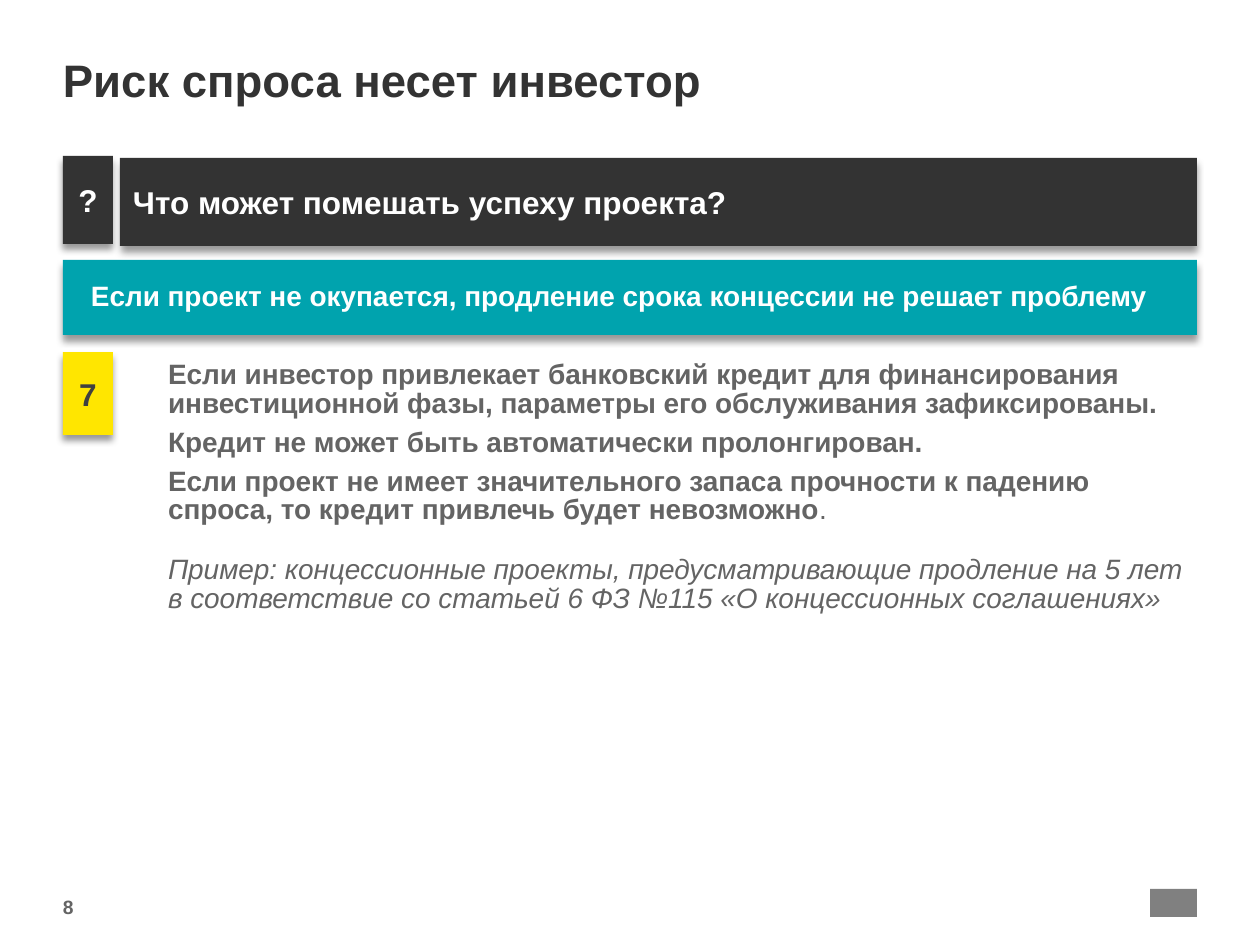
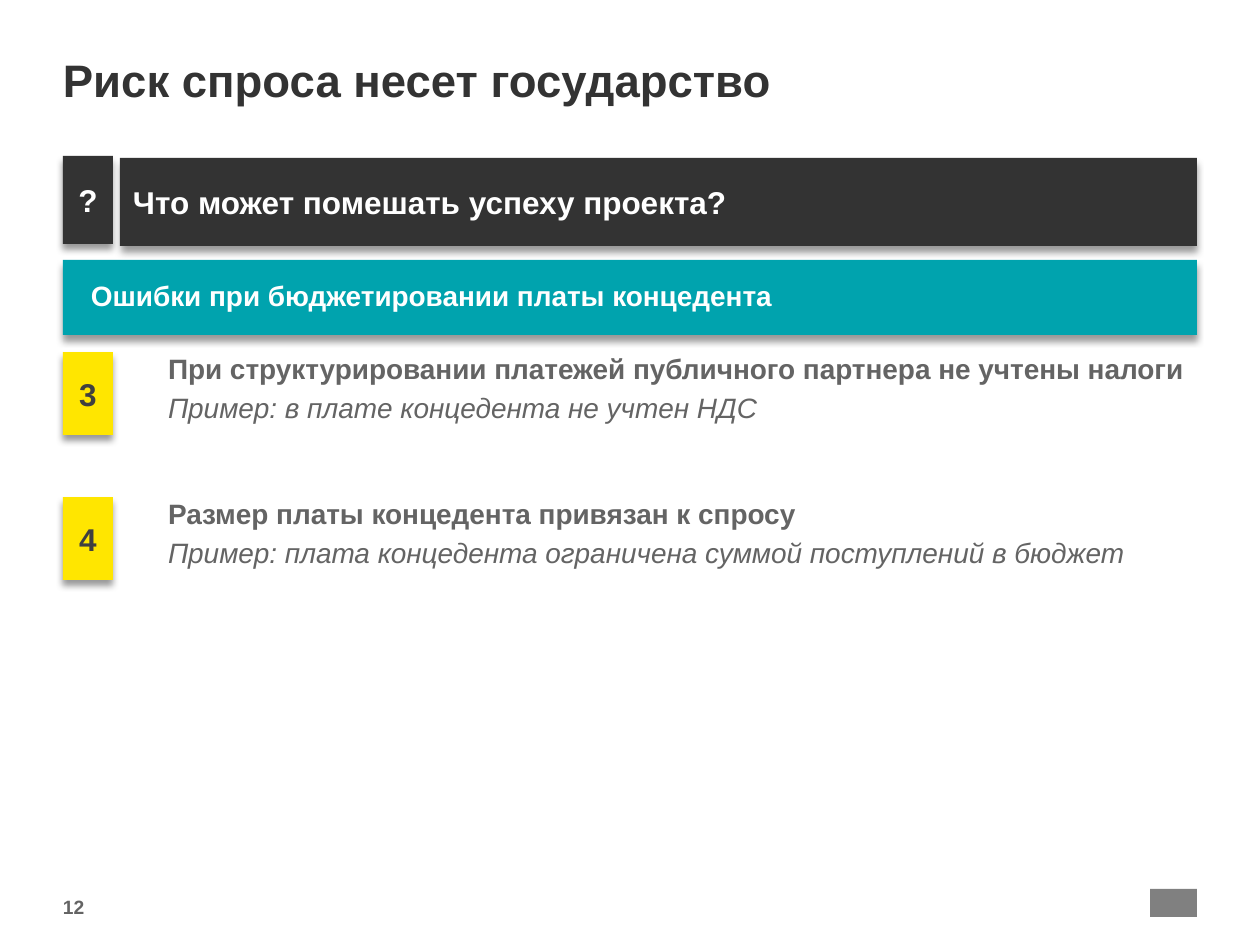
from lxml import etree
from pptx import Presentation
from pptx.dml.color import RGBColor
from pptx.enum.shapes import MSO_SHAPE
from pptx.enum.text import MSO_ANCHOR, MSO_AUTO_SIZE, PP_ALIGN
from pptx.oxml.ns import qn
from pptx.util import Emu, Pt

RECTANGLE = MSO_SHAPE.RECTANGLE
MIDDLE, TOP = MSO_ANCHOR.MIDDLE, MSO_ANCHOR.TOP
LEFT, CENTER = PP_ALIGN.LEFT, PP_ALIGN.CENTER
GROW = MSO_AUTO_SIZE.SHAPE_TO_FIT_TEXT

QUESTION = "Что может помешать успеху проекта?"
SLIDES = [
    {
        "title": "Риск спроса несет инвестор",
        "page": "8",
        "topic": "Если проект не окупается, продление срока концессии не решает проблему",
        "text_drop": 5,
        "text_height": 260,
        "example_gap": 12,
        "risks": [
            ("7", [
                [("Если инвестор привлекает банковский кредит для финансирования "
                  "инвестиционной фазы, параметры его обслуживания зафиксированы.", "bold")],
                [("Кредит не может быть автоматически пролонгирован.", "bold")],
                [("Если проект не имеет значительного запаса прочности к падению спроса, "
                  "то кредит привлечь будет невозможно", "bold"), (".", "plain")],
                [("Пример: концессионные проекты, предусматривающие продление на 5 лет "
                  "в соответствие со статьей 6 ФЗ №115 «О концессионных соглашениях»", "italic")],
            ]),
        ],
    },
    {
        "title": "Риск спроса несет государство",
        "page": "12",
        "topic": "Ошибки при бюджетировании платы концедента",
        "text_drop": 0,
        "text_height": 73,
        "example_gap": 0,
        "risks": [
            ("3", [
                [("При структурировании платежей публичного партнера не учтены налоги", "bold")],
                [("Пример: в плате концедента не учтен НДС", "italic")],
            ]),
            ("4", [
                [("Размер платы концедента привязан к спросу", "bold")],
                [("Пример: плата концедента ограничена суммой поступлений в бюджет", "italic")],
            ]),
        ],
    },
]

COLORS = {
    "dark": "333333",
    "teal": "00A3AE",
    "yellow": "FFE600",
    "number": "404040",
    "body": "646464",
    "mark": "808080",
    "white": "FFFFFF",
    "shadow": "000000",
}
FONT = "Arial"
LINE_SPACING = 0.85
PX = 914400 / 126

WIDTH, HEIGHT = 1260, 945
MARGIN = 63
CONTENT_WIDTH = WIDTH - 2 * MARGIN
BADGE_WIDTH = 50
QUESTION_LEFT = 120
TEXT_LEFT = 168
RIGHT = WIDTH - MARGIN
RISK_TOP, RISK_STEP = 352, 145


def px(value):
    return Emu(round(value * PX))


def color(name):
    return RGBColor.from_string(COLORS[name])


def style_font(font, size, color_name, bold=True, italic=False):
    font.name = FONT
    font.size = Pt(size)
    font.bold = bold
    font.italic = italic
    font.color.rgb = color(color_name)


def set_frame(frame, anchor, insets):
    frame.word_wrap = True
    frame.vertical_anchor = anchor
    frame.margin_left, frame.margin_top, frame.margin_right, frame.margin_bottom = map(px, insets)


def add_label(slide, box, text, size, color_name, anchor=TOP, spacing=1.0):
    label = slide.shapes.add_textbox(*map(px, box))
    frame = label.text_frame
    set_frame(frame, anchor, (0, 0, 0, 0))
    frame.text = text
    frame.paragraphs[0].line_spacing = spacing
    style_font(frame.paragraphs[0].runs[0].font, size, color_name)


def add_block(slide, box, fill):
    block = slide.shapes.add_shape(RECTANGLE, *map(px, box))
    block.shadow.inherit = False
    block.fill.solid()
    block.fill.fore_color.rgb = color(fill)
    block.line.fill.background()
    return block


def add_shadow(block):
    effects = block.fill._xPr.find(qn("a:effectLst"))
    shadow = etree.SubElement(effects, qn("a:outerShdw"), blurRad=str(Pt(4)),
                              dist=str(Pt(3)), dir="5400000", algn="t", rotWithShape="0")
    tint = etree.SubElement(shadow, qn("a:srgbClr"), val=COLORS["shadow"])
    etree.SubElement(tint, qn("a:alpha"), val="40000")


def add_band(slide, box, text, fill, text_color, size=18, align=CENTER, insets=(13, 6, 13, 6)):
    band = add_block(slide, box, fill)
    add_shadow(band)
    set_frame(band.text_frame, MIDDLE, insets)
    band.text_frame.text = text
    paragraph = band.text_frame.paragraphs[0]
    paragraph.alignment = align
    style_font(paragraph.runs[0].font, size, text_color)
    return paragraph


def add_risk_text(slide, box, paragraphs, example_gap):
    frame = slide.shapes.add_textbox(*map(px, box)).text_frame
    set_frame(frame, TOP, (0, 5, 0, 0))
    frame.auto_size = GROW
    for index, pieces in enumerate(paragraphs):
        paragraph = frame.add_paragraph() if index else frame.paragraphs[0]
        paragraph.line_spacing = LINE_SPACING
        paragraph.space_after = Pt(6)
        if index and pieces[0][1] == "italic":
            paragraph.space_before = Pt(example_gap)
        for text, style in pieces:
            run = paragraph.add_run()
            run.text = text
            style_font(run.font, 16, "body", style == "bold", style == "italic")


def add_frame(slide, content):
    add_label(slide, (MARGIN, 895, 100, 28), content["page"], 11, "body")
    add_block(slide, (1150, 889, 47, 28), "mark")
    add_label(slide, (MARGIN, 25, CONTENT_WIDTH, 118), content["title"], 26, "dark",
              MIDDLE, LINE_SPACING)
    add_band(slide, (MARGIN, 156, BADGE_WIDTH, 88), "?", "dark", "white")
    add_band(slide, (QUESTION_LEFT, 158, RIGHT - QUESTION_LEFT, 88), QUESTION,
             "dark", "white", align=LEFT)
    topic = add_band(slide, (MARGIN, 260, CONTENT_WIDTH, 75), content["topic"],
                     "teal", "white", 16, LEFT, (28, 3, 3, 3))
    topic.line_spacing = LINE_SPACING


def main():
    deck = Presentation()
    deck.slide_width, deck.slide_height = px(WIDTH), px(HEIGHT)
    for content in SLIDES:
        slide = deck.slides.add_slide(deck.slide_layouts[6])
        add_frame(slide, content)
        for index, (number, paragraphs) in enumerate(content["risks"]):
            top = RISK_TOP + index * RISK_STEP
            add_band(slide, (MARGIN, top, BADGE_WIDTH, 83), number, "yellow", "number")
            box = (TEXT_LEFT, top + content["text_drop"], RIGHT - TEXT_LEFT,
                   content["text_height"])
            add_risk_text(slide, box, paragraphs, content["example_gap"])
    deck.save("out.pptx")


if __name__ == "__main__":
    main()
